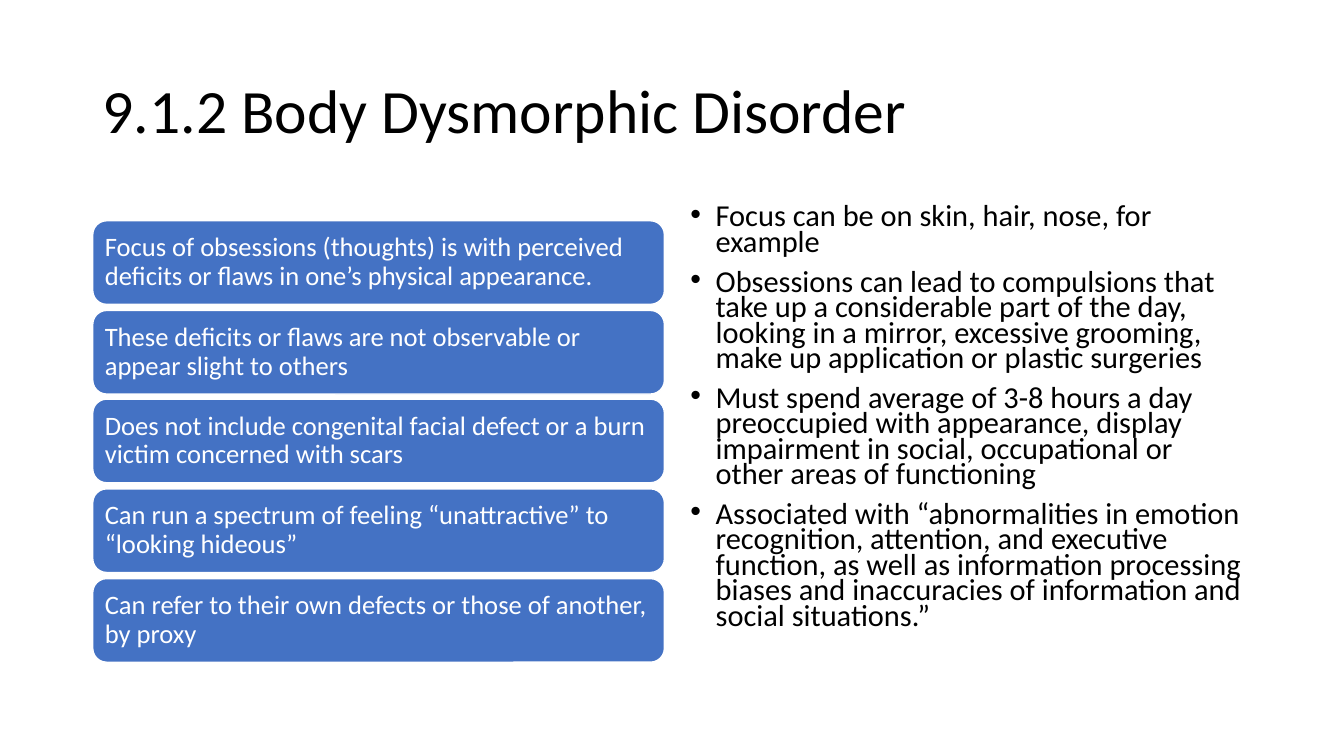
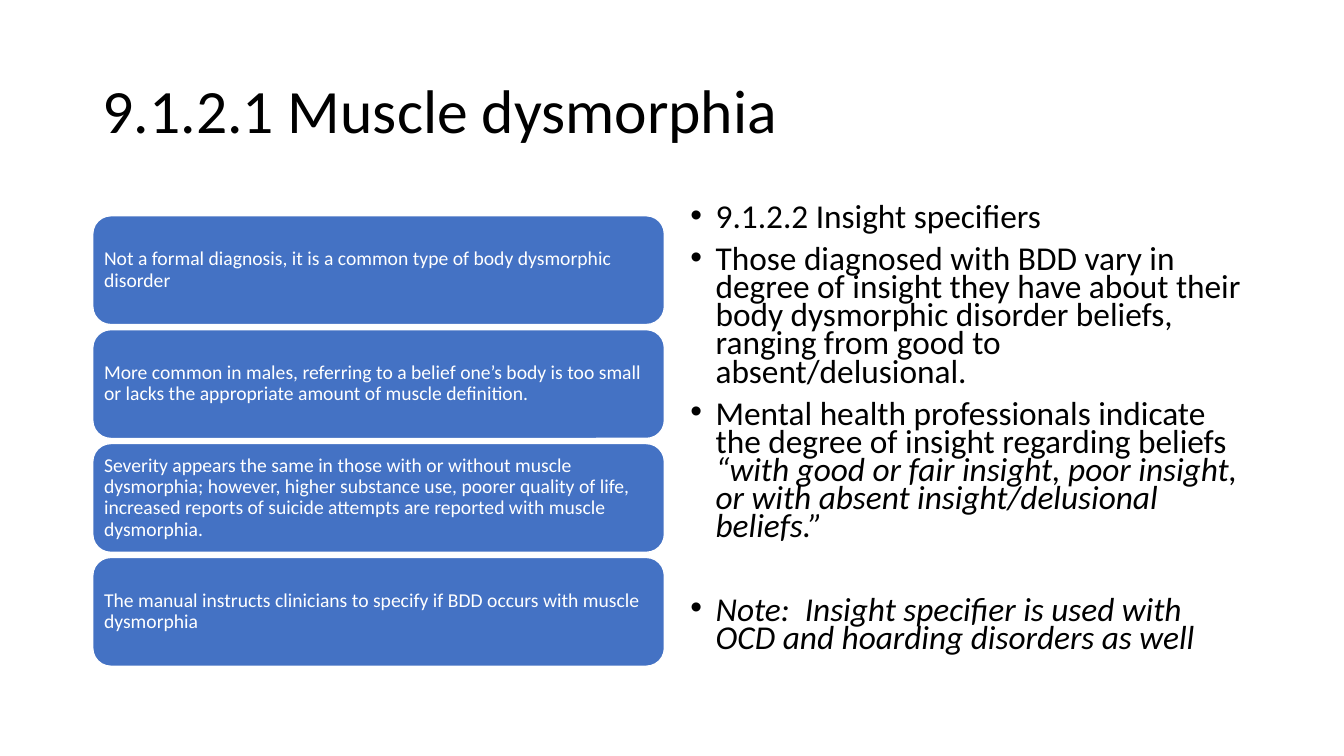
"""Build two slides on body dysmorphic disorder."""
from lxml import etree
from pptx import Presentation
from pptx.dml.color import RGBColor
from pptx.enum.shapes import MSO_SHAPE
from pptx.enum.text import MSO_ANCHOR, PP_ALIGN
from pptx.oxml.ns import qn
from pptx.util import Pt

PX = 9144
FONT = "Calibri"
ROUND = MSO_SHAPE.ROUNDED_RECTANGLE
MID, TOP, LEFT = MSO_ANCHOR.MIDDLE, MSO_ANCHOR.TOP, PP_ALIGN.LEFT
HUES = {"ink": "000000", "card": "4472C4", "white": "FFFFFF"}
EDGE, WIDE = 92, 567


def hue(name):
    return RGBColor.from_string(HUES[name])


def write(shape, paras, size, color="ink", anchor=MID, pad=(10, 5), lead=0.9, bullet=False):
    """Fill a shape with paragraphs, each a list of (text, italic) runs and a space before."""
    frame = shape.text_frame
    frame.word_wrap = True
    frame.vertical_anchor = anchor
    frame.margin_left = frame.margin_right = pad[0] * PX
    frame.margin_top = frame.margin_bottom = pad[1] * PX
    for i, (runs, gap) in enumerate(paras):
        para = frame.paragraphs[0] if i == 0 else frame.add_paragraph()
        para.alignment = LEFT
        para.line_spacing = lead
        para.space_before = Pt(gap)
        if bullet:
            props = para._p.get_or_add_pPr()
            props.set("marL", str(25 * PX))
            props.set("indent", str(-25 * PX))
            etree.SubElement(props, qn("a:buFont")).set("typeface", "Arial")
            etree.SubElement(props, qn("a:buChar")).set("char", "•")
        for text, slant in runs:
            run = para.add_run()
            run.text = text
            run.font.name = FONT
            run.font.size = Pt(size)
            run.font.color.rgb = hue(color)
            if slant:
                run.font.italic = True


PAGES = [
    {
        "title": "9.1.2 Body Dysmorphic Disorder",
        "top": 219, "end": 657, "high": 83, "pad": 8, "size": 19,
        "cards": [
            "Focus of obsessions (thoughts) is with perceived deficits or flaws in one’s physical appearance.",
            "These deficits or flaws are not observable or appear slight to others",
            "Does not include congenital facial defect or a burn victim concerned with scars",
            "Can run a spectrum of feeling “unattractive” to “looking hideous”",
            "Can refer to their own defects or those of another, by proxy",
        ],
        "body": 21.7,
        "points": [
            ([("Focus can be on skin, hair, nose, for example", False)], 10),
            ([("Obsessions can lead to compulsions that take up a considerable part of the day, "
               "looking in a mirror, excessive grooming, make up application or plastic surgeries", False)], 10),
            ([("Must spend average of 3-8 hours a day preoccupied with appearance, display "
               "impairment in social, occupational or other areas of functioning", False)], 10),
            ([("Associated with “abnormalities in emotion recognition, attention, and executive "
               "function, as well as information processing biases and inaccuracies of "
               "information and social situations.”", False)], 10),
        ],
    },
    {
        "title": "9.1.2.1 Muscle dysmorphia",
        "top": 214, "end": 661, "high": 108, "pad": 6, "size": 14,
        "cards": [
            "Not a formal diagnosis, it is a common type of body dysmorphic disorder",
            "More common in males, referring to a belief one’s body is too small or lacks the "
            "appropriate amount of muscle definition.",
            "Severity appears the same in those with or without muscle dysmorphia; however, "
            "higher substance use, poorer quality of life, increased reports of suicide attempts "
            "are reported with muscle dysmorphia.",
            "The manual instructs clinicians to specify if BDD occurs with muscle dysmorphia",
        ],
        "body": 23.8,
        "points": [
            ([("9.1.2.2 Insight specifiers", False)], 10),
            ([("Those diagnosed with BDD vary in degree of insight they have about their body "
               "dysmorphic disorder beliefs, ranging from good to absent/delusional.", False)], 10),
            ([("Mental health professionals indicate the degree of insight regarding beliefs ", False),
              ("“with good or fair insight, poor insight, or with absent insight/delusional beliefs.”", True)], 10),
            ([("Note:  Insight specifier is used with OCD and hoarding disorders as well", True)], 40),
        ],
    },
]

deck = Presentation()
deck.slide_width, deck.slide_height = 1333 * PX, 750 * PX
blank = deck.slide_layouts[6]

for page in PAGES:
    shapes = deck.slides.add_slide(blank).shapes
    title = shapes.add_textbox(EDGE * PX, 40 * PX, 1150 * PX, 145 * PX)
    write(title, [([(page["title"], False)], 0)], 44)

    high = page["high"]
    step = (page["end"] - page["top"] - high) / (len(page["cards"]) - 1)
    for i, text in enumerate(page["cards"]):
        top = round(page["top"] + i * step)
        card = shapes.add_shape(ROUND, EDGE * PX, top * PX, WIDE * PX, high * PX)
        card.shadow.inherit = False
        card.fill.solid()
        card.fill.fore_color.rgb = hue("card")
        card.line.color.rgb = hue("white")
        card.line.width = Pt(1)
        write(card, [([(text, False)], 0)], page["size"], color="white", pad=(page["pad"], page["pad"]))

    body = shapes.add_textbox(675 * PX, 200 * PX, WIDE * PX, 476 * PX)
    write(body, page["points"], page["body"], anchor=TOP, lead=0.7, bullet=True)

deck.save("out.pptx")
